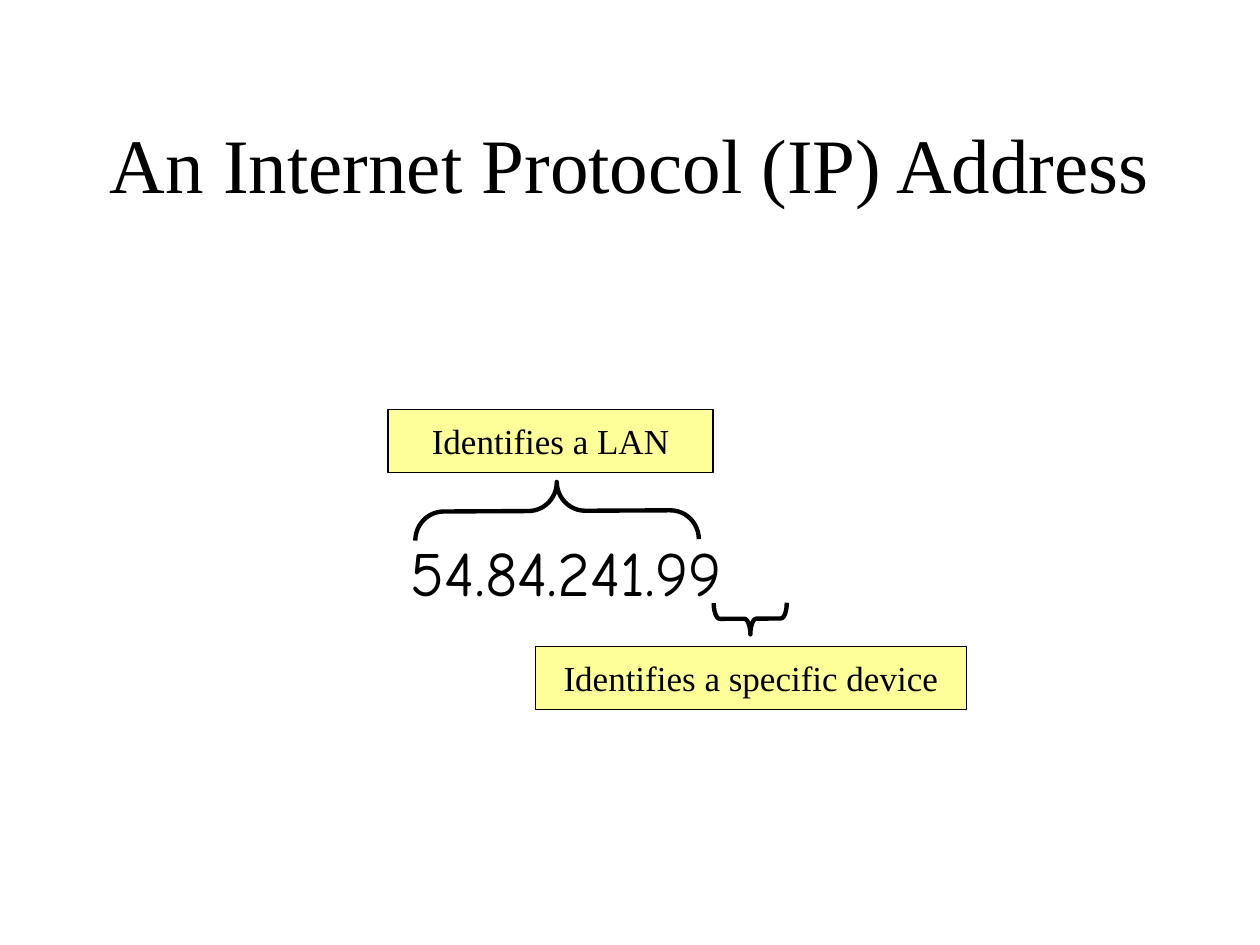
"""Build a slide that explains the parts of an IP address."""
from typing import NamedTuple

from pptx import Presentation
from pptx.dml.color import RGBColor
from pptx.enum.shapes import MSO_SHAPE
from pptx.enum.text import MSO_ANCHOR, PP_ALIGN
from pptx.util import Inches, Pt

RECT = MSO_SHAPE.RECTANGLE
BRACE = MSO_SHAPE.LEFT_BRACE
MIDDLE = MSO_ANCHOR.MIDDLE
LEFT, CENTER = PP_ALIGN.LEFT, PP_ALIGN.CENTER
BLACK = RGBColor(0x00, 0x00, 0x00)
WHITE = RGBColor(0xFF, 0xFF, 0xFF)
YELLOW = RGBColor(0xFF, 0xFF, 0x99)
SERIF, COMIC = "Times New Roman", "Comic Neue"


class Box(NamedTuple):
    left: float
    top: float
    width: float
    height: float


class Label(NamedTuple):
    text: str
    box: Box


class Brace(NamedTuple):
    box: Box
    turn: float
    curve: float


LABELS = [
    Label("Identifies a LAN", Box(3.08, 3.25, 2.58, 0.5)),
    Label("Identifies a specific device", Box(4.25, 5.13, 3.42, 0.5)),
]
BRACES = [
    Brace(Box(5.83, 4.62, 0.25, 0.58), 269.7, 0.19),
    Brace(Box(4.19, 2.93, 0.46, 2.25), 89.7, 0.49),
]


def add_shape(slide, kind, box: Box):
    shape = slide.shapes.add_shape(kind, *map(Inches, box))
    shape.shadow.inherit = False
    return shape


def set_text(shape, text: str, size: int, face: str, align=CENTER) -> None:
    frame = shape.text_frame
    frame.text = text
    frame.vertical_anchor = MIDDLE
    line = frame.paragraphs[0]
    line.alignment = align
    line.font.size = Pt(size)
    line.font.name = face
    line.font.color.rgb = BLACK


def set_line(shape, width: float) -> None:
    shape.line.color.rgb = BLACK
    shape.line.width = Pt(width)


def add_title(slide, text: str) -> None:
    title = slide.shapes.title
    title.left, title.top = Inches(0.75), Inches(0.67)
    title.width, title.height = Inches(8.5), Inches(1.25)
    set_text(title, text, 44, SERIF)


def add_address(slide, text: str) -> None:
    shape = add_shape(slide, RECT, Box(0.46, 4.16, 7.71, 0.75))
    shape.fill.solid()
    shape.fill.fore_color.rgb = WHITE
    shape.line.fill.background()
    set_text(shape, text, 36, COMIC, LEFT)
    shape.text_frame.margin_left = Inches(2.8)
    shape.text_frame.word_wrap = True


def add_label(slide, label: Label) -> None:
    shape = add_shape(slide, RECT, label.box)
    shape.fill.solid()
    shape.fill.fore_color.rgb = YELLOW
    set_line(shape, 0.75)
    set_text(shape, label.text, 20, SERIF)
    shape.text_frame.word_wrap = False


def add_brace(slide, brace: Brace) -> None:
    shape = add_shape(slide, BRACE, brace.box)
    shape.rotation = brace.turn
    shape.adjustments[0] = brace.curve
    shape.adjustments[1] = 0.5
    shape.fill.background()
    set_line(shape, 2.5)


def main() -> None:
    deck = Presentation()
    deck.slide_width, deck.slide_height = Inches(10), Inches(7.5)
    slide = deck.slides.add_slide(deck.slide_layouts[5])
    add_title(slide, "An Internet Protocol (IP) Address")
    add_address(slide, "54.84.241.99")
    for label in LABELS:
        add_label(slide, label)
    for brace in BRACES:
        add_brace(slide, brace)
    deck.save("out.pptx")


if __name__ == "__main__":
    main()
